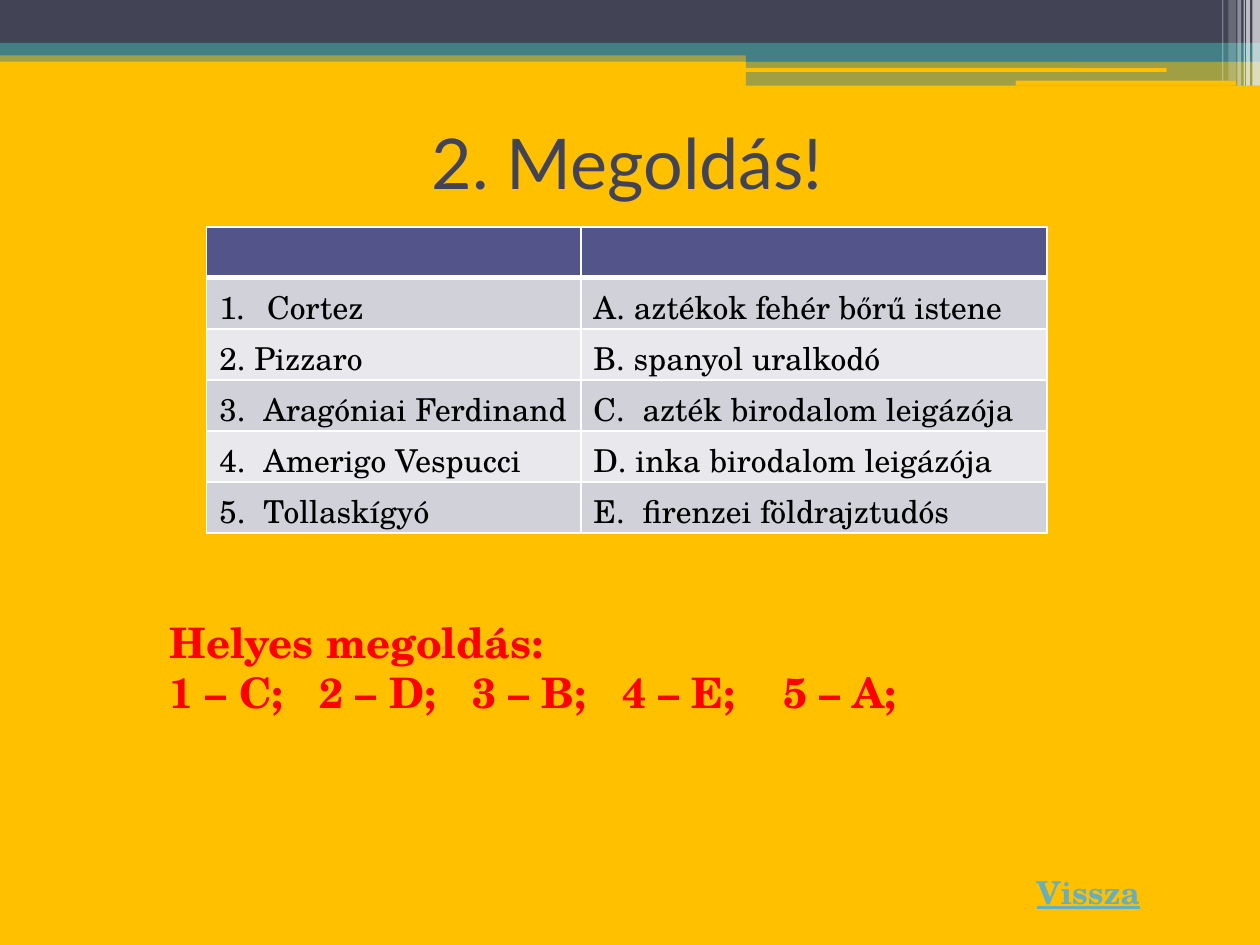
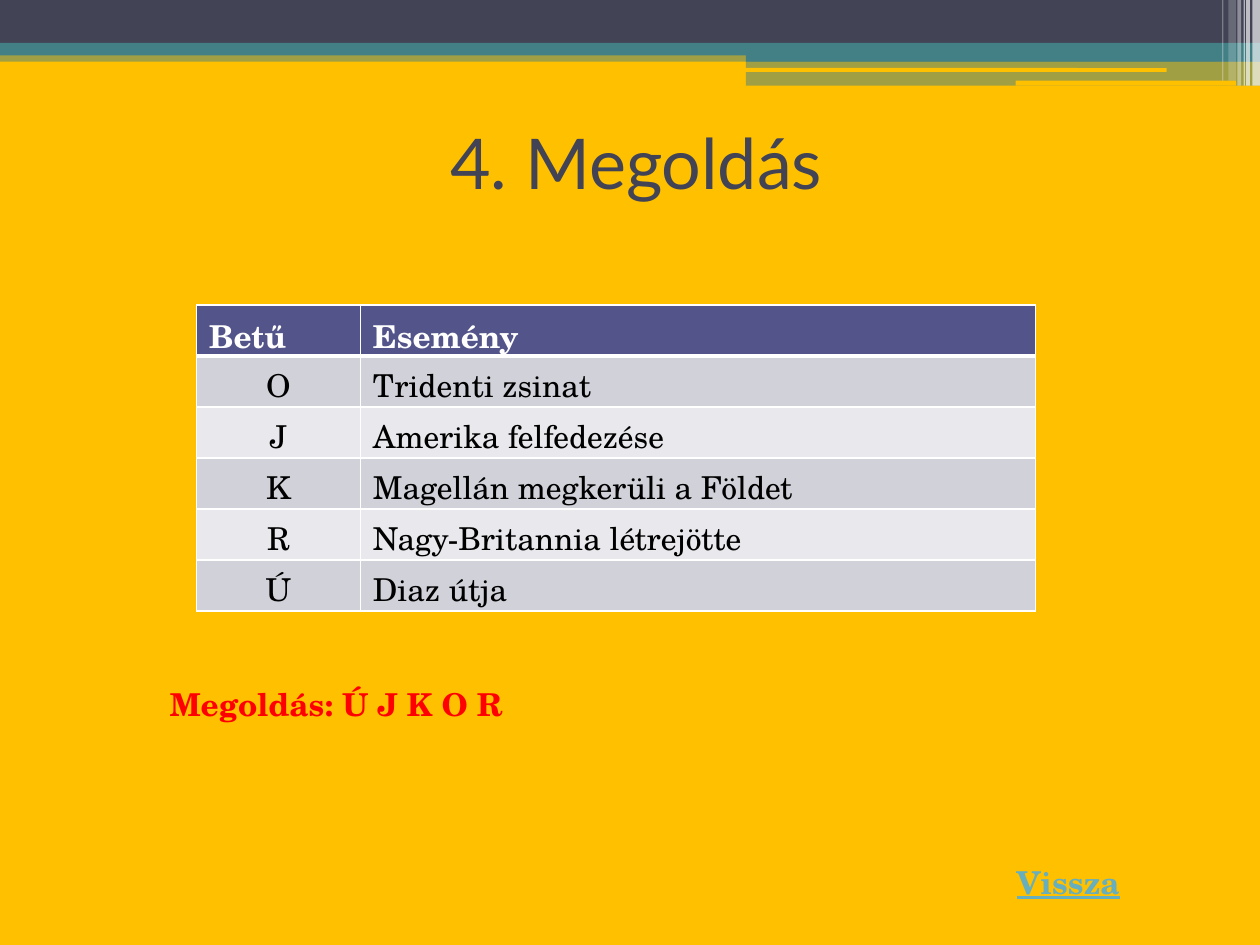
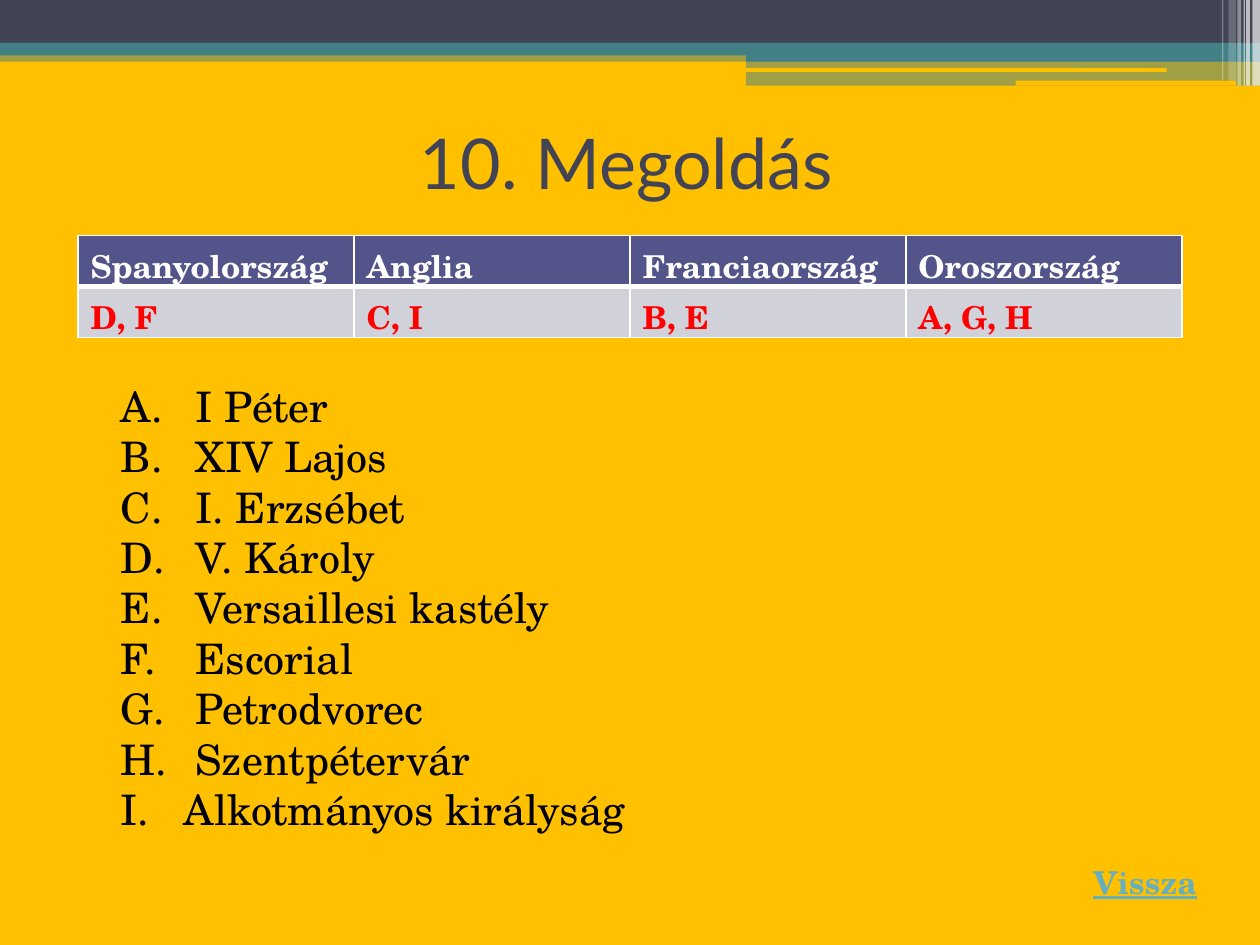
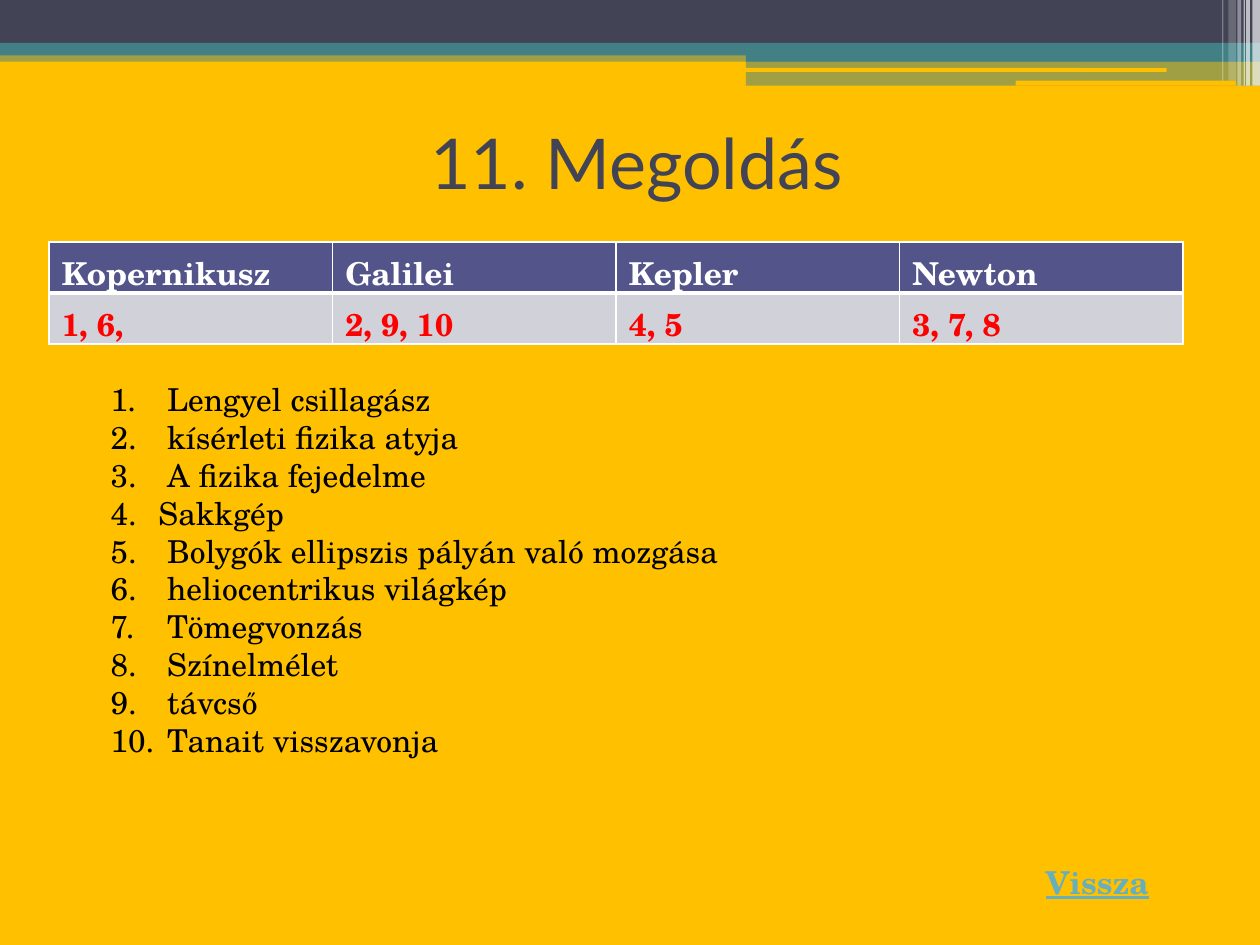
from dataclasses import dataclass

from lxml.etree import SubElement
from pptx import Presentation
from pptx.dml.color import RGBColor as Rgb
from pptx.enum.shapes import MSO_SHAPE as Shape
from pptx.enum.text import MSO_ANCHOR as Anchor, MSO_AUTO_SIZE as AutoSize, PP_ALIGN as Align
from pptx.oxml.ns import qn
from pptx.util import Inches, Pt


@dataclass(frozen=True)
class Theme:
    background: str = "FFC000"
    ink: str = "424456"
    teal: str = "438086"
    white: str = "FFFFFF"
    black: str = "000000"
    red: str = "FF0000"
    link: str = "67AFBD"
    header: str = "53548A"
    odd_row: str = "D1D1DA"
    even_row: str = "E9E9ED"
    title_font: str = "Lato"
    body_font: str = "TeX Gyre Schola"
    title_size: int = 40
    large_size: int = 24
    body_size: int = 18
    thin_border: int = 1
    thick_border: int = 3


THEME = Theme()


def text_style(color, size=THEME.body_size, name=THEME.body_font, **extra):
    return {"color": color, "format": {"name": name, "size": Pt(size), **extra}}


TITLE = text_style(THEME.ink, THEME.title_size, THEME.title_font)
BODY = text_style(THEME.black)
LARGE_BODY = text_style(THEME.black, THEME.large_size)
HEADER = text_style(THEME.white, bold=True)
ANSWER = text_style(THEME.red, bold=True)
LARGE_ANSWER = text_style(THEME.red, THEME.large_size, bold=True)
LINK = text_style(THEME.link, bold=True, underline=True)

BANDS = [
    ((0, 0.4, 10, 0.09), THEME.teal, 50),
    ((0, 0, 10, 0.34), THEME.ink, 100),
    ((0, 0.34, 10, 0.1), THEME.teal, 100),
    ((5.92, 0.39, 4.08, 0.1), THEME.teal, 100),
    ((5.92, 0.48, 4.08, 0.2), THEME.teal, 50),
]
ROUNDED_BANDS = [
    ((5.91, 0.54, 3.35, 0.03), THEME.background, 100),
    ((8.06, 0.64, 1.75, 0.04), THEME.background, 100),
]
STRIPES = [
    ((9.94, 0, 0.06, 0.68), THEME.white, 65),
    ((9.89, 0, 0.03, 0.68), THEME.white, 65),
    ((9.87, 0, 0.01, 0.68), THEME.white, 60),
    ((9.82, 0, 0.03, 0.68), THEME.white, 40),
    ((9.75, 0, 0.06, 0.64), THEME.white, 20),
    ((9.7, 0, 0.01, 0.64), THEME.white, 30),
]


def set_attributes(target, values):
    for name, value in values.items():
        setattr(target, name, value)


def paint(fill, color):
    fill.solid()
    fill.fore_color.rgb = Rgb.from_string(color)


def write(para, text, style, align=Align.LEFT, tabs=()):
    para.alignment = align
    span = para.add_run()
    span.text = text
    set_attributes(span.font, style["format"])
    span.font.color.rgb = Rgb.from_string(style["color"])
    if "\t" in text:
        tab_list = SubElement(para._p.get_or_add_pPr(), qn("a:tabLst"))
        for stop in tabs:
            SubElement(tab_list, qn("a:tab"), pos=str(Inches(stop)), algn="l")


def number(para, scheme, indent):
    properties = para._p.get_or_add_pPr()
    properties.set("marL", str(Inches(indent)))
    properties.set("indent", str(-Inches(indent)))
    SubElement(properties, qn("a:buAutoNum"), type=scheme)


def add_band(page, kind, area, color, opacity):
    band = page.shapes.add_shape(kind, *map(Inches, area))
    band.shadow.inherit = False
    band.line.fill.background()
    paint(band.fill, color)
    if opacity < 100:
        color_node = band.element.find(".//" + qn("a:srgbClr"))
        SubElement(color_node, qn("a:alpha"), val=str(opacity * 1000))
    return band


def decorate_layout(layout, page):
    paint(layout.background.fill, THEME.background)
    for holder in list(layout.placeholders):
        holder.element.getparent().remove(holder.element)
    groups = [(Shape.RECTANGLE, BANDS), (Shape.ROUNDED_RECTANGLE, ROUNDED_BANDS),
              (Shape.RECTANGLE, STRIPES)]
    for kind, bands in groups:
        for band in bands:
            layout.shapes.element.append(add_band(page, kind, *band).element)


def add_text(page, area, lines, style, align=Align.LEFT, tabs=(), **frame_format):
    box = page.shapes.add_textbox(*map(Inches, area))
    frame = box.text_frame
    set_attributes(frame, {"word_wrap": True, "auto_size": AutoSize.SHAPE_TO_FIT_TEXT,
                           **frame_format})
    for index, line in enumerate(lines):
        para = frame.add_paragraph() if index else frame.paragraphs[0]
        write(para, line, style, align, tabs)
    return box


def add_title(page, text, left=0.55):
    add_text(page, (left, 0.7, 9, 1.17), [text], TITLE, Align.CENTER,
             auto_size=AutoSize.NONE, vertical_anchor=Anchor.MIDDLE)


def add_back_label(page, left, top=6.8):
    add_text(page, (left, top, 1.03, 0.4), ["Vissza"], LINK, word_wrap=False)


def add_numbered_list(page, area, items, style, scheme, indent):
    box = add_text(page, area, items, style)
    for para in box.text_frame.paragraphs:
        number(para, scheme, indent)


def set_borders(cell, row):
    widths = {"L": THEME.thin_border, "R": THEME.thin_border,
              "T": THEME.thick_border if row == 1 else THEME.thin_border,
              "B": THEME.thick_border if row == 0 else THEME.thin_border}
    properties = cell._tc.get_or_add_tcPr()
    for index, (side, width) in enumerate(widths.items()):
        border = SubElement(properties, qn("a:ln" + side), w=str(Pt(width)))
        fill = SubElement(border, qn("a:solidFill"))
        SubElement(fill, qn("a:srgbClr"), val=THEME.white)
        properties.insert(index, border)


def add_table(page, area, rows, widths, body_style=BODY, first_align=Align.LEFT, tabs=None):
    table = page.shapes.add_table(len(rows), len(widths), *map(Inches, area)).table
    for column, width in zip(table.columns, widths):
        column.width = Inches(width)
    for row, texts in enumerate(rows):
        color = THEME.odd_row if row % 2 else THEME.even_row
        for column, text in enumerate(texts):
            cell = table.cell(row, column)
            paint(cell.fill, color if row else THEME.header)
            set_borders(cell, row)
            if text:
                align = first_align if row and column == 0 else Align.LEFT
                write(cell.text_frame.paragraphs[0], text, body_style if row else HEADER,
                      align, [tabs[column]] if tabs else ())
    return table


def build_explorers(page):
    add_title(page, "2. Megoldás! ")
    add_back_label(page, 8.13, 6.88)
    rows = [
        ("", ""),
        ("Cortez", "A. aztékok fehér bőrű istene"),
        ("2. Pizzaro", "B. spanyol uralkodó"),
        ("3.\tAragóniai Ferdinand", "C.\tazték birodalom leigázója"),
        ("4.\tAmerigo Vespucci", "D. inka birodalom leigázója"),
        ("5.\tTollaskígyó", "E.\tfirenzei földrajztudós"),
    ]
    table = add_table(page, (1.64, 1.8, 6.67, 2.43), rows, (2.97, 3.7), tabs=(0.35, 0.39))
    number(table.cell(1, 0).text_frame.paragraphs[0], "arabicPeriod", 0.38)
    add_text(page, (1.25, 4.84, 6.56, 0.91),
             ["Helyes megoldás:", "1 – C;\t2 – D;\t3 – B;\t4 – E;\t5 – A;"],
             LARGE_ANSWER, tabs=(1.19, 2.4, 3.59, 4.87))


def build_events(page):
    add_title(page, "4. Megoldás")
    add_back_label(page, 7.97)
    rows = [
        ("Betű", "Esemény"),
        ("O", "Tridenti zsinat"),
        ("J", "Amerika felfedezése"),
        ("K", "Magellán megkerüli a Földet"),
        ("R", "Nagy-Britannia létrejötte"),
        ("Ú", "Diaz útja"),
    ]
    add_table(page, (1.56, 2.42, 6.67, 2.43), rows, (1.3, 5.36), first_align=Align.CENTER)
    add_text(page, (1.25, 5.39, 7.03, 0.4), ["Megoldás: Ú J K O R"], ANSWER)


def build_countries(page):
    add_title(page, "10. Megoldás", 0.47)
    add_back_label(page, 8.58)
    rows = [
        ("Spanyolország", "Anglia", "Franciaország", "Oroszország"),
        ("D, F", "C, I", "B, E", "A, G, H"),
    ]
    add_table(page, (0.62, 1.87, 8.75, 0.81), rows, [2.19] * 4, ANSWER)
    items = [" I Péter", " XIV Lajos", " I. Erzsébet", " V. Károly", " Versaillesi kastély",
             " Escorial", " Petrodvorec", " Szentpétervár", "Alkotmányos királyság"]
    add_numbered_list(page, (0.86, 2.97, 6.02, 3.74), items, LARGE_BODY, "alphaUcPeriod", 0.5)


def build_scientists(page):
    add_title(page, "11. Megoldás")
    add_back_label(page, 8.2)
    rows = [
        ("Kopernikusz", "Galilei", "Kepler", "Newton"),
        ("1, 6,", "2, 9, 10", "4, 5", "3, 7, 8"),
    ]
    add_table(page, (0.39, 1.92, 8.98, 0.81), rows, [2.25] * 4, ANSWER)
    items = [" Lengyel csillagász", " kísérleti fizika atyja", " A fizika fejedelme", "Sakkgép",
             " Bolygók ellipszis pályán való mozgása", " heliocentrikus világkép",
             " Tömegvonzás", " Színelmélet", " távcső", " Tanait visszavonja"]
    add_numbered_list(page, (0.78, 2.97, 7.34, 3.13), items, BODY, "arabicPeriod", 0.38)


def main():
    deck = Presentation()
    set_attributes(deck, {"slide_width": Inches(10), "slide_height": Inches(7.5)})
    layout = deck.slide_layouts[6]
    builders = [build_explorers, build_events, build_countries, build_scientists]
    pages = [deck.slides.add_slide(layout) for _ in builders]
    decorate_layout(layout, pages[0])
    for build, page in zip(builders, pages):
        build(page)
    deck.save("out.pptx")


if __name__ == "__main__":
    main()
